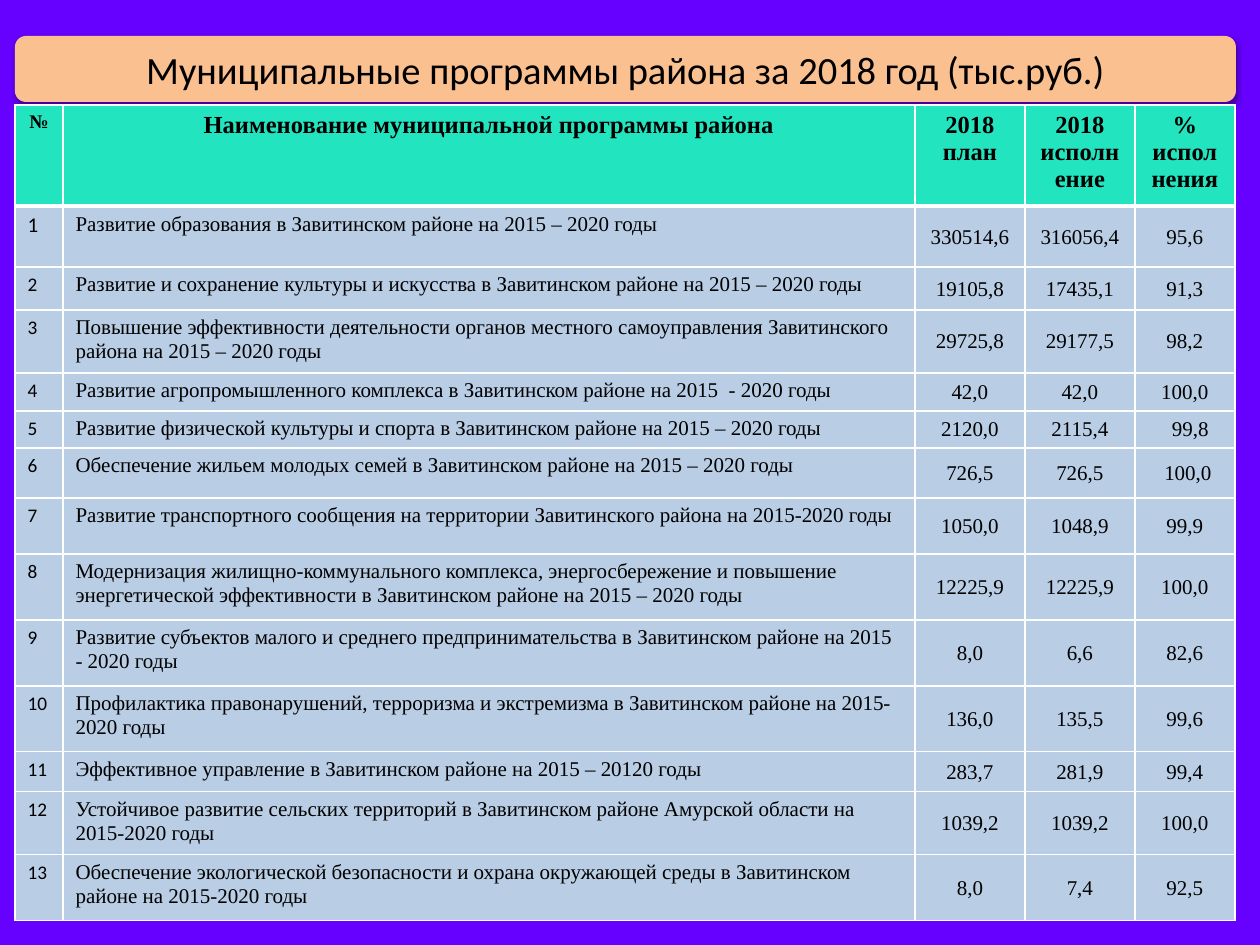
from lxml.etree import SubElement
from pptx import Presentation
from pptx.dml.color import RGBColor
from pptx.enum.shapes import MSO_SHAPE
from pptx.enum.text import MSO_ANCHOR, PP_ALIGN
from pptx.oxml import parse_xml
from pptx.oxml.ns import nsdecls, qn
from pptx.util import Emu, Pt

VIOLET = RGBColor(0x66, 0x00, 0xFF)
PEACH = RGBColor(0xFA, 0xC0, 0x90)
TEAL = RGBColor(0x22, 0xE4, 0xBF)
BLUE = RGBColor(0xB9, 0xCD, 0xE5)
WHITE = RGBColor(0xFF, 0xFF, 0xFF)
BLACK = RGBColor(0x00, 0x00, 0x00)
SANS, SERIF = "Calibri", "Times New Roman"

TITLE = "Муниципальные программы района за 2018 год (тыс.руб.)"
HEADS = ["№", "Наименование муниципальной программы района",
         "2018 план", "2018 исполнение", "% исполнения"]
# name, plan, actual, percent
PROGRAMS = [
    ("Развитие образования в Завитинском районе на 2015 – 2020 годы",
     "330514,6", "316056,4", "95,6"),
    ("Развитие и сохранение культуры и искусства в Завитинском районе на 2015 – 2020 годы",
     "19105,8", "17435,1", "91,3"),
    ("Повышение эффективности деятельности органов местного самоуправления "
     "Завитинского района на 2015 – 2020 годы",
     "29725,8", "29177,5", "98,2"),
    ("Развитие агропромышленного комплекса в Завитинском районе на 2015  - 2020 годы",
     "42,0", "42,0", "100,0"),
    ("Развитие физической культуры и спорта в Завитинском районе на 2015 – 2020 годы",
     "2120,0", "2115,4", "99,8"),
    ("Обеспечение жильем молодых семей в Завитинском районе на 2015 – 2020 годы",
     "726,5", "726,5", "100,0"),
    ("Развитие транспортного сообщения на территории Завитинского района на 2015-2020 годы",
     "1050,0", "1048,9", "99,9"),
    ("Модернизация жилищно-коммунального комплекса, энергосбережение и повышение "
     "энергетической эффективности в Завитинском районе на 2015 – 2020 годы",
     "12225,9", "12225,9", "100,0"),
    ("Развитие субъектов малого и среднего предпринимательства в Завитинском районе "
     "на 2015 - 2020 годы",
     "8,0", "6,6", "82,6"),
    ("Профилактика правонарушений, терроризма и экстремизма в Завитинском районе "
     "на 2015-2020 годы",
     "136,0", "135,5", "99,6"),
    ("Эффективное управление в Завитинском районе на 2015 – 20120 годы",
     "283,7", "281,9", "99,4"),
    ("Устойчивое развитие сельских территорий в Завитинском районе Амурской области "
     "на 2015-2020 годы",
     "1039,2", "1039,2", "100,0"),
    ("Обеспечение экологической безопасности и охрана окружающей среды в Завитинском "
     "районе на 2015-2020 годы",
     "8,0", "7,4", "92,5"),
]
WIDTHS = [48, 852, 110, 110, 100]
HEIGHTS = [101, 61, 43, 63, 38, 37, 50, 56, 66, 66, 66, 40, 63, 66]
NUDGES = {5: 11, 6: 6}  # extra left margin of the percent, by program number


def px(count):
    return Emu(round(count * 914400 / 126))


def style(frame, size, face, bold=False, align=PP_ALIGN.LEFT):
    para = frame.paragraphs[0]
    para.alignment = align
    font = para.font
    font.size, font.name, font.bold = Pt(size), face, bold
    font.color.rgb = BLACK


def add_shadow(shape):
    shape._element.spPr.append(parse_xml(
        f'<a:effectLst {nsdecls("a")}>'
        '<a:outerShdw blurRad="39370" dist="20320" dir="5400000" rotWithShape="0">'
        '<a:srgbClr val="000000"><a:alpha val="38000"/></a:srgbClr>'
        '</a:outerShdw></a:effectLst>'))


def add_title(slide):
    box = slide.shapes.add_shape(
        MSO_SHAPE.ROUNDED_RECTANGLE, px(15), px(36), px(1221), px(66))
    box.fill.solid()
    box.fill.fore_color.rgb = PEACH
    box.line.fill.background()
    add_shadow(box)
    frame = box.text_frame
    frame.text = TITLE
    frame.word_wrap = True
    frame.vertical_anchor = MSO_ANCHOR.MIDDLE
    style(frame, 22, SANS, align=PP_ALIGN.CENTER)


def set_edges(cell, top, bottom):
    """Draw white borders, with the top and bottom widths in points."""
    props = cell._tc.get_or_add_tcPr()
    for tag, width in (("lnL", 1), ("lnR", 1), ("lnT", top), ("lnB", bottom)):
        line = SubElement(props, qn(f"a:{tag}"), w=str(Pt(width)))
        fill = SubElement(line, qn("a:solidFill"))
        SubElement(fill, qn("a:srgbClr"), val=str(WHITE))


def fill_cell(cell, text, color, top=1, bottom=1):
    cell.text = text
    set_edges(cell, top, bottom)
    cell.fill.solid()
    cell.fill.fore_color.rgb = color


def fill_value(cell, nudge):
    cell.vertical_anchor = MSO_ANCHOR.MIDDLE
    cell.margin_left = px(1 + nudge)
    cell.margin_right = cell.margin_top = px(1)
    cell.margin_bottom = 0
    style(cell.text_frame, 12, SERIF, align=PP_ALIGN.CENTER)


def add_programs(slide):
    frame = slide.shapes.add_table(
        len(HEIGHTS), len(WIDTHS), px(15), px(105), px(sum(WIDTHS)), px(sum(HEIGHTS)))
    table = frame.table
    table.horz_banding = False
    for column, width in zip(table.columns, WIDTHS):
        column.width = px(width)
    for row, height in zip(table.rows, HEIGHTS):
        row.height = px(height)

    for col, head in enumerate(HEADS):
        cell = table.cell(0, col)
        fill_cell(cell, head, TEAL, bottom=3)
        style(cell.text_frame, 14 if col else 11, SERIF, True, PP_ALIGN.CENTER)

    for num, program in enumerate(PROGRAMS, 1):
        for col, text in enumerate((str(num), *program)):
            cell = table.cell(num, col)
            fill_cell(cell, text, BLUE, top=3 if num == 1 else 1)
            if col == 0:
                style(cell.text_frame, 12 if num == 1 else 11, SANS)
            elif col == 1:
                style(cell.text_frame, 12, SERIF)
            else:
                fill_value(cell, NUDGES.get(num, 0) if col == 4 else 0)


def main():
    deck = Presentation()
    deck.slide_width, deck.slide_height = px(1260), px(945)
    slide = deck.slides.add_slide(deck.slide_layouts[6])
    slide.background.fill.solid()
    slide.background.fill.fore_color.rgb = VIOLET
    add_title(slide)
    add_programs(slide)
    deck.save("out.pptx")


if __name__ == "__main__":
    main()
